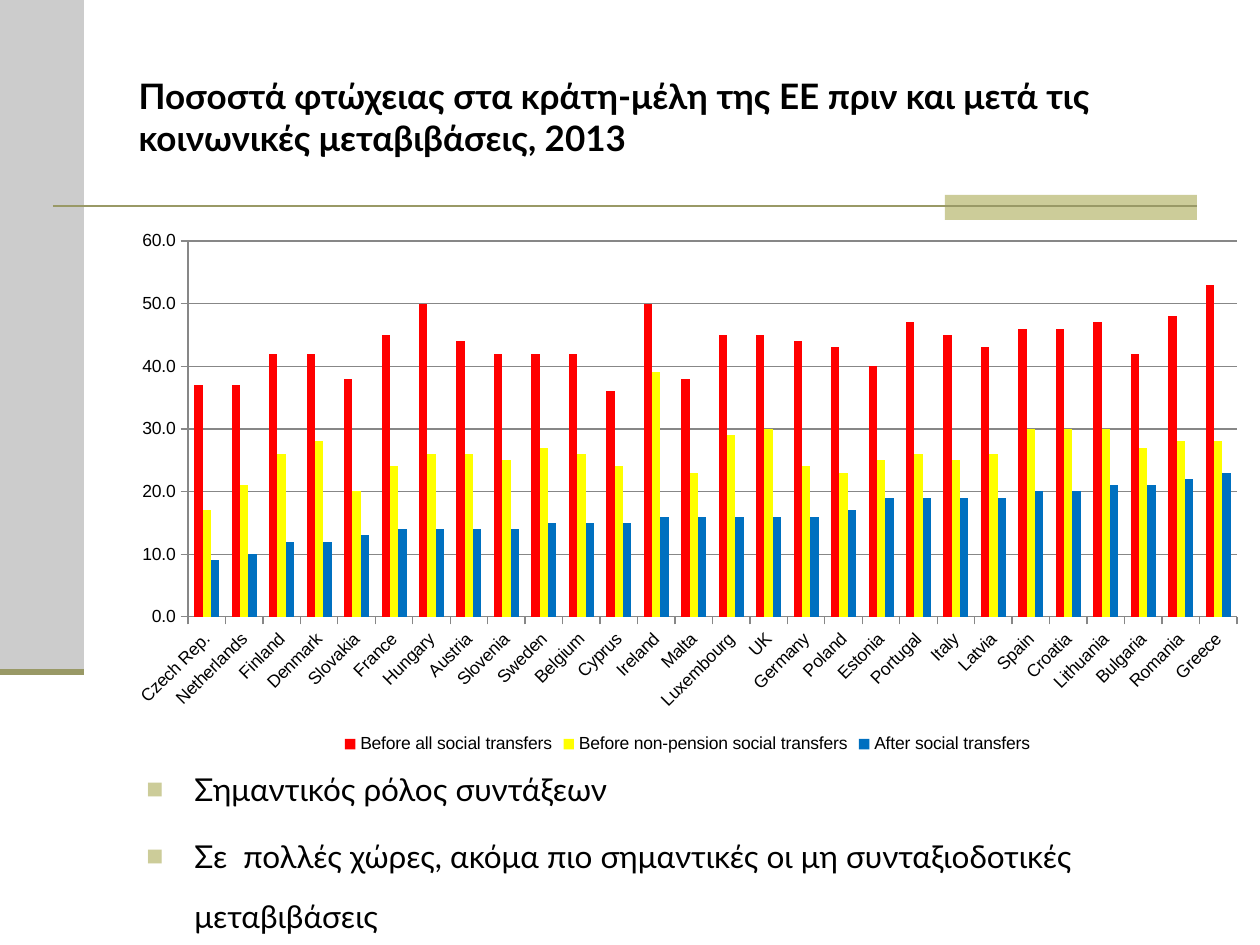
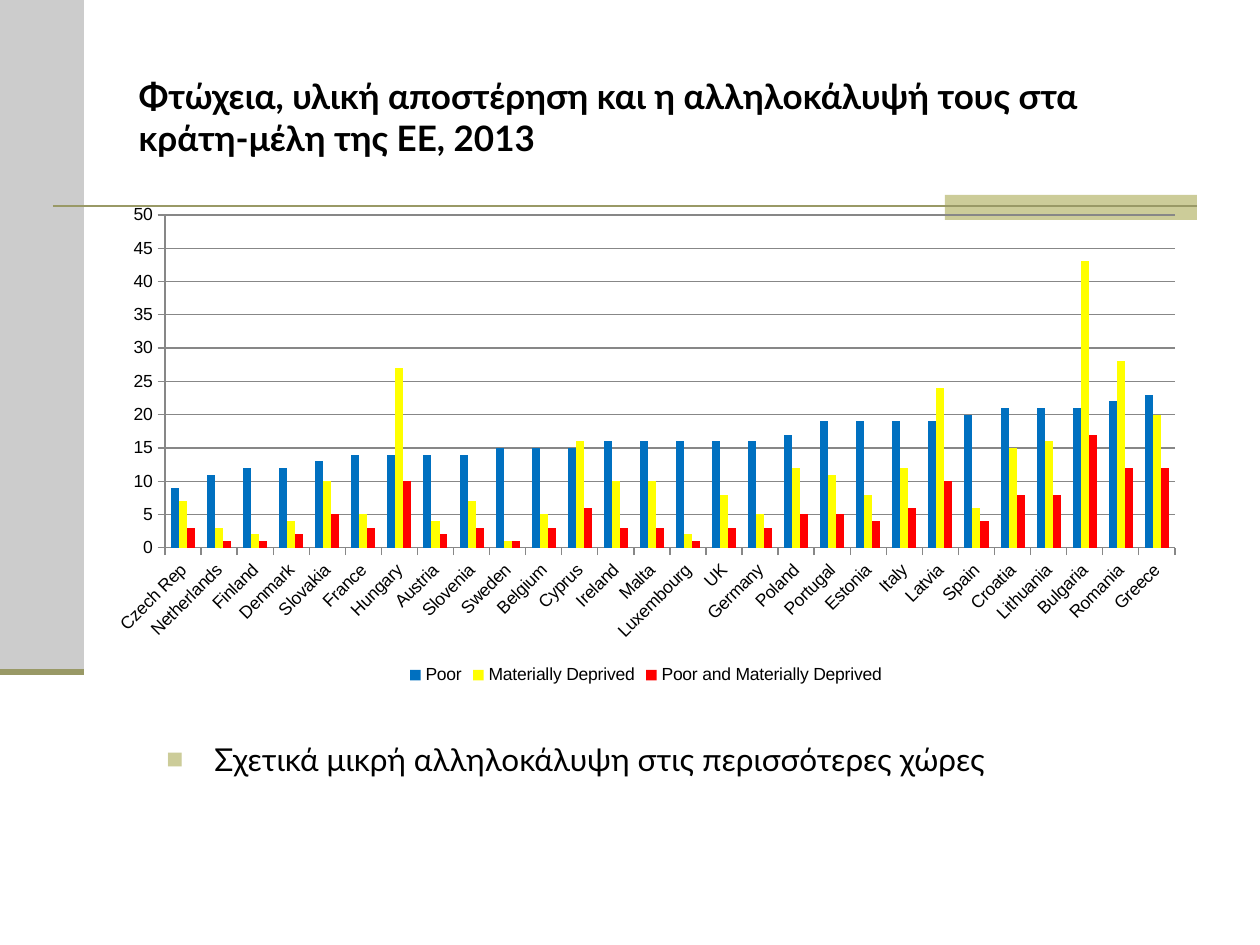
import pptx
import pptx.util
import pptx.chart.data
import pptx.dml.color
import pptx.enum.chart
import pptx.enum.shapes
import pptx.enum.text
import pptx.oxml
import pptx.oxml.ns
from lxml import etree

RGB = pptx.dml.color.RGBColor
Pt = pptx.util.Pt
qn = pptx.oxml.ns.qn

BLACK = RGB(0x00, 0x00, 0x00)
GREY = RGB(0xCC, 0xCC, 0xCC)
KHAKI = RGB(0xCC, 0xCC, 0x99)
OLIVE = RGB(0x99, 0x99, 0x66)
AXIS = RGB(0x87, 0x87, 0x87)
RED = RGB(0xFF, 0x00, 0x00)
YELLOW = RGB(0xFF, 0xFF, 0x00)
BLUE = RGB(0x00, 0x70, 0xC0)

TEXT_FONT, CHART_FONT = "Lato", "Arial"
TITLE_BOX = (126, 38, 1071, 157)
BANDS = [((0, 0, 84, 672), GREY), ((945, 195, 252, 25), KHAKI)]
RULES = [((53, 206, 1197, 206), 1.5), ((0, 672, 84, 672), 3.5)]

NORTH = ["Netherlands", "Finland", "Denmark", "Slovakia", "France", "Hungary",
         "Austria", "Slovenia", "Sweden", "Belgium", "Cyprus", "Ireland",
         "Malta", "Luxembourg", "UK", "Germany", "Poland"]
SOUTH = ["Italy", "Latvia", "Spain", "Croatia", "Lithuania", "Bulgaria",
         "Romania", "Greece"]

SLIDES = [
    {
        "title": "Ποσοστά φτώχειας στα κράτη-μέλη της ΕΕ πριν και μετά τις "
                 "κοινωνικές μεταβιβάσεις, 2013",
        "chart": (115, 220, 1145, 539),
        "plot": (188, 241, 1049, 376),
        "format": "#,##0.0",
        "scale": (60, 10),
        "countries": ["Czech Rep."] + NORTH + ["Estonia", "Portugal"] + SOUTH,
        "series": [
            ("Before all social transfers", RED,
             [37, 37, 42, 42, 38, 45, 50, 44, 42, 42, 42, 36, 50, 38,
              45, 45, 44, 43, 40, 47, 45, 43, 46, 46, 47, 42, 48, 53]),
            ("Before non-pension social transfers", YELLOW,
             [17, 21, 26, 28, 20, 24, 26, 26, 25, 27, 26, 24, 39, 23,
              29, 30, 24, 23, 25, 26, 25, 26, 30, 30, 30, 27, 28, 28]),
            ("After social transfers", BLUE,
             [9, 10, 12, 12, 13, 14, 14, 14, 14, 15, 15, 15, 16, 16,
              16, 16, 16, 17, 19, 19, 19, 19, 20, 20, 21, 21, 22, 23]),
        ],
        "notes_box": (134, 741, 1071, 165),
        "bullets": ["Σημαντικός ρόλος συντάξεων",
                    "Σε  πολλές χώρες, ακόμα πιο σημαντικές οι μη "
                    "συνταξιοδοτικές μεταβιβάσεις"],
    },
    {
        "title": "Φτώχεια, υλική αποστέρηση και η αλληλοκάλυψή τους στα "
                 "κράτη-μέλη της ΕΕ, 2013",
        "chart": (95, 195, 1102, 495),
        "plot": (165, 215, 1010, 333),
        "format": "General",
        "scale": (50, 5),
        "countries": ["Czech Rep"] + NORTH + ["Portugal", "Estonia"] + SOUTH,
        "series": [
            ("Poor", BLUE,
             [9, 11, 12, 12, 13, 14, 14, 14, 14, 15, 15, 15, 16, 16,
              16, 16, 16, 17, 19, 19, 19, 19, 20, 21, 21, 21, 22, 23]),
            ("Materially Deprived", YELLOW,
             [7, 3, 2, 4, 10, 5, 27, 4, 7, 1, 5, 16, 10, 10,
              2, 8, 5, 12, 11, 8, 12, 24, 6, 15, 16, 43, 28, 20]),
            ("Poor and Materially Deprived", RED,
             [3, 1, 1, 2, 5, 3, 10, 2, 3, 1, 3, 6, 3, 3,
              1, 3, 3, 5, 5, 4, 6, 10, 4, 8, 8, 17, 12, 12]),
        ],
        "notes_box": (154, 711, 1071, 149),
        "bullets": ["Σχετικά μικρή αλληλοκάλυψη στις περισσότερες χώρες"],
    },
]


def px(n):
    return round(n * 914400 / 126)


def place(box):
    return [px(n) for n in box]


def style_runs(p, size, bold=False):
    for r in p.runs:
        r.font.name = TEXT_FONT
        r.font.size = Pt(size)
        r.font.bold = bold
        r.font.color.rgb = BLACK


def add_frame(s, layout):
    parts = []
    for box, color in BANDS:
        sp = s.shapes.add_shape(
            pptx.enum.shapes.MSO_SHAPE.RECTANGLE, *place(box))
        sp.shadow.inherit = False
        sp.fill.solid()
        sp.fill.fore_color.rgb = color
        sp.line.fill.background()
        parts.append(sp)
    for ends, width in RULES:
        line = s.shapes.add_connector(
            pptx.enum.shapes.MSO_CONNECTOR.STRAIGHT, *place(ends))
        line.line.color.rgb = OLIVE
        line.line.width = Pt(width)
        etree.SubElement(line.element.spPr, qn("a:effectLst"))
        parts.append(line)
    for i, part in enumerate(parts):
        layout.shapes.element.insert(2 + i, part.element)


def set_title(s, text):
    sp = s.shapes.title
    sp.left, sp.top, sp.width, sp.height = place(TITLE_BOX)
    tf = sp.text_frame
    tf.text = text
    tf.word_wrap = True
    tf.auto_size = pptx.enum.text.MSO_AUTO_SIZE.NONE
    tf.vertical_anchor = pptx.enum.text.MSO_ANCHOR.MIDDLE
    p = tf.paragraphs[0]
    p.alignment = pptx.enum.text.PP_ALIGN.LEFT
    style_runs(p, 20, True)


def set_plot_box(chart, outer, inner):
    area = chart.element.find(".//" + qn("c:plotArea"))
    for old in area.findall(qn("c:layout")):
        area.remove(old)
    layout = etree.Element(qn("c:layout"))
    manual = etree.SubElement(layout, qn("c:manualLayout"))
    left, top, width, height = outer
    x, y, w, h = inner
    values = [("layoutTarget", "inner"), ("xMode", "edge"), ("yMode", "edge"),
              ("x", (x - left) / width), ("y", (y - top) / height),
              ("w", w / width), ("h", h / height)]
    for tag, value in values:
        etree.SubElement(manual, qn("c:" + tag)).set("val", str(value))
    area.insert(0, layout)


def add_column_chart(s, item):
    data = pptx.chart.data.CategoryChartData()
    data.categories = item["countries"]
    for name, _, values in item["series"]:
        data.add_series(name, values)
    chart = s.shapes.add_chart(
        pptx.enum.chart.XL_CHART_TYPE.COLUMN_CLUSTERED,
        *place(item["chart"]), data).chart
    chart.has_title = False
    chart.font.name = CHART_FONT
    chart.font.size = Pt(10)
    chart.font.color.rgb = BLACK
    chart.has_legend = True
    chart.legend.position = pptx.enum.chart.XL_LEGEND_POSITION.BOTTOM
    chart.legend.include_in_layout = False

    plot = chart.plots[0]
    plot.gap_width = 150
    plot.vary_by_categories = False
    for series, (_, color, _) in zip(plot.series, item["series"]):
        series.invert_if_negative = False
        series.format.fill.solid()
        series.format.fill.fore_color.rgb = color

    cat, val = chart.category_axis, chart.value_axis
    val.minimum_scale = 0
    val.maximum_scale, val.major_unit = item["scale"]
    val.has_major_gridlines = True
    val.tick_labels.number_format = item["format"]
    val.tick_labels.number_format_is_linked = False
    for part in (cat, val, val.major_gridlines):
        part.format.line.color.rgb = AXIS
        part.format.line.width = Pt(0.75)
    for axis in (cat, val):
        axis.major_tick_mark = pptx.enum.chart.XL_TICK_MARK.OUTSIDE
        axis.tick_labels.font.size = Pt(10)
    cat_axis = chart.element.find(".//" + qn("c:catAx"))
    cat_axis.find(".//" + qn("a:bodyPr")).set("rot", "-2700000")
    set_plot_box(chart, item["chart"], item["plot"])


def add_bullets(s, box, lines):
    tf = s.shapes.add_textbox(*place(box)).text_frame
    tf.word_wrap = True
    for i, line in enumerate(lines):
        p = tf.add_paragraph() if i else tf.paragraphs[0]
        p.text = line
        p.line_spacing = 1.6
        p.space_before = Pt(3.6)
        style_runs(p, 18)
        pPr = p._p.get_or_add_pPr()
        pPr.set("marL", str(px(48)))
        pPr.set("indent", str(-px(48)))
        color = etree.SubElement(pPr, qn("a:buClr"))
        etree.SubElement(color, qn("a:srgbClr")).set("val", str(KHAKI))
        etree.SubElement(pPr, qn("a:buSzPct")).set("val", "90000")
        etree.SubElement(pPr, qn("a:buFont")).set("typeface", CHART_FONT)
        etree.SubElement(pPr, qn("a:buChar")).set("char", "■")


def main():
    prs = pptx.Presentation()
    prs.slide_width, prs.slide_height = px(1260), px(945)
    layout = prs.slide_layouts[5]
    for i, item in enumerate(SLIDES):
        s = prs.slides.add_slide(layout)
        if i == 0:
            add_frame(s, layout)
        set_title(s, item["title"])
        add_column_chart(s, item)
        add_bullets(s, item["notes_box"], item["bullets"])
    prs.save("out.pptx")


if __name__ == "__main__":
    main()
